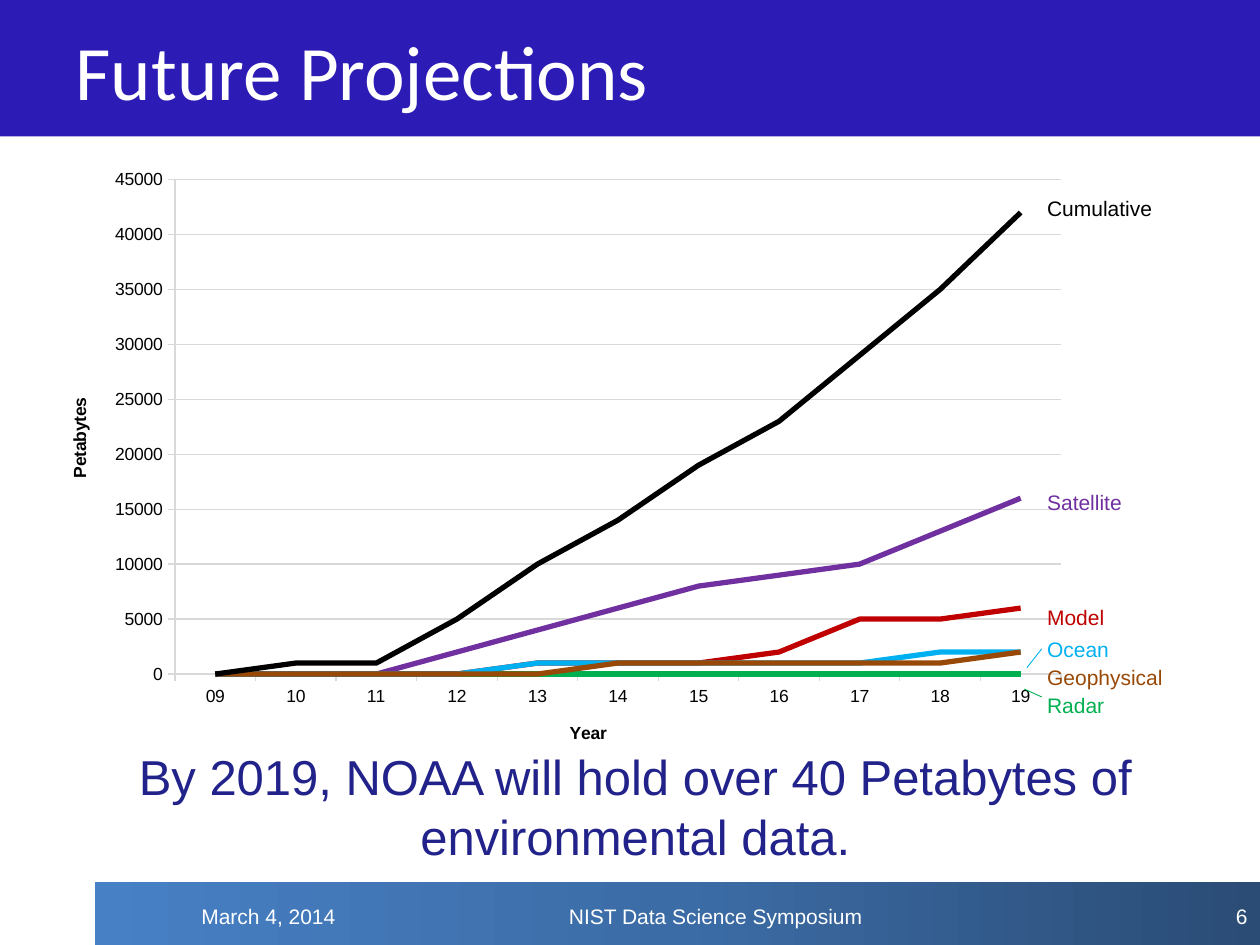
from copy import deepcopy
from dataclasses import dataclass

from pptx import Presentation
from pptx.chart.data import CategoryChartData
from pptx.dml.color import RGBColor
from pptx.enum.chart import XL_CHART_TYPE, XL_TICK_MARK
from pptx.enum.shapes import MSO_CONNECTOR, MSO_SHAPE
from pptx.enum.text import MSO_ANCHOR, MSO_AUTO_SIZE, PP_ALIGN
from pptx.oxml import parse_xml
from pptx.oxml.ns import nsdecls, qn
from pptx.util import Cm, Pt


@dataclass(frozen=True)
class Theme:
    heading_font: str = "Calibri"
    body_font: str = "Arial"
    title_size: int = 44
    statement_size: int = 28
    label_size: int = 12
    axis_size: int = 10
    white: str = "FFFFFF"
    black: str = "000000"
    banner: str = "2D1BB5"
    statement: str = "22228B"
    grid: str = "D9D9D9"
    footer_gradient: tuple = ("4780C5", "3C6CA6", "2A4C75")


THEME = Theme()

TITLE = "Future Projections"
STATEMENT = "By 2019, NOAA will hold over 40 Petabytes of environmental data."
YEARS = ["09", "10", "11", "12", "13", "14", "15", "16", "17", "18", "19"]
# name, colour, label top in cm, values
SERIES = [
    ("Satellite", "7030A0", 9.75,
     [0, 0, 0, 2000, 4000, 6000, 8000, 9000, 10000, 13000, 16000]),
    ("Radar", "00B050", 13.84, [0, 0, 0, 0, 0, 0, 0, 0, 0, 0, 0]),
    ("Model", "C00000", 12.07,
     [0, 0, 0, 0, 1000, 1000, 1000, 2000, 5000, 5000, 6000]),
    ("Ocean", "00B0F0", 12.7,
     [0, 0, 0, 0, 1000, 1000, 1000, 1000, 1000, 2000, 2000]),
    ("Geophysical", "984807", 13.28,
     [0, 0, 0, 0, 0, 1000, 1000, 1000, 1000, 1000, 2000]),
    ("Cumulative", "000000", 3.81,
     [0, 1000, 1000, 5000, 10000, 14000, 19000, 23000, 29000, 35000, 42000]),
]
# colour, start and end in cm
LEADERS = [
    ("00B0F0", (20.7, 13.46), (21.0, 13.08)),
    ("00B050", (20.65, 13.89), (21.0, 14.05)),
]
# text, left and width in cm, alignment
FOOTER = [
    ("March 4, 2014", 3.81, 3.23, PP_ALIGN.LEFT),
    ("NIST Data Science Symposium", 11.22, 6.48, PP_ALIGN.LEFT),
    ("6", 19.48, 5.92, PP_ALIGN.RIGHT),
]
LABEL_LEFT, LABEL_WIDTH, LABEL_HEIGHT = 20.86, 2.9, 0.77
CHART_WIDTH, CHART_HEIGHT = 20.96, 12.34


def color(value):
    return RGBColor.from_string(value)


def style_font(font, size, value, name=THEME.body_font, bold=False):
    font.size, font.name, font.bold = Pt(size), name, bold
    font.color.rgb = color(value)


def place(shape, left, top, width, height):
    shape.left, shape.top = Cm(left), Cm(top)
    shape.width, shape.height = Cm(width), Cm(height)


def add_bar(slide, left, top, width, height):
    bar = slide.shapes.add_shape(
        MSO_SHAPE.RECTANGLE, Cm(left), Cm(top), Cm(width), Cm(height))
    bar.shadow.inherit = False
    bar.line.fill.background()
    return bar


def apply_gradient(shape, colors):
    """Spread any number of colours evenly from left to right."""
    shape.fill.gradient()
    shape.fill.gradient_angle = 0
    stops = shape._element.spPr.find(qn("a:gradFill")).find(qn("a:gsLst"))
    while len(stops) < len(colors):
        stops.append(deepcopy(stops[-1]))
    for index, (stop, value) in enumerate(zip(shape.fill.gradient_stops, colors)):
        stop.color.rgb = color(value)
        stop.position = index / (len(colors) - 1)


def add_label(slide, text, left, top, width, value, alignment=PP_ALIGN.LEFT):
    box = slide.shapes.add_textbox(
        Cm(left), Cm(top), Cm(width), Cm(LABEL_HEIGHT))
    box.text_frame.word_wrap = True
    box.text_frame.text = text
    paragraph = box.text_frame.paragraphs[0]
    paragraph.alignment = alignment
    style_font(paragraph.runs[0].font, THEME.label_size, value)


def fill_placeholder(shape, text, size, value, name, alignment):
    frame = shape.text_frame
    frame.text = text
    frame.auto_size = MSO_AUTO_SIZE.NONE
    frame.word_wrap = True
    frame.vertical_anchor = MSO_ANCHOR.MIDDLE
    paragraph = frame.paragraphs[0]
    paragraph.alignment = alignment
    paragraph.space_before = Pt(0)
    style_font(paragraph.runs[0].font, size, value, name)
    return paragraph


def set_layout(element, index, target=None, **lengths):
    """Fix a chart part at lengths in cm within the chart area."""
    for old in element.findall(qn("c:layout")):
        element.remove(old)
    whole = {"x": CHART_WIDTH, "w": CHART_WIDTH,
             "y": CHART_HEIGHT, "h": CHART_HEIGHT}
    inner = f'<c:layoutTarget val="{target}"/>' if target else ""
    inner += "".join(f'<c:{key}Mode val="edge"/>' for key in ("x", "y"))
    inner += "".join(f'<c:{key} val="{length / whole[key]:.4f}"/>'
                     for key, length in lengths.items())
    element.insert(index, parse_xml(
        f'<c:layout {nsdecls("c")}><c:manualLayout>{inner}'
        '</c:manualLayout></c:layout>'))


def format_axis(axis, title, x, y):
    axis.major_tick_mark = XL_TICK_MARK.OUTSIDE
    axis.minor_tick_mark = XL_TICK_MARK.NONE
    axis.format.line.color.rgb = color(THEME.grid)
    style_font(axis.tick_labels.font, THEME.axis_size, THEME.black)
    frame = axis.axis_title.text_frame
    frame.text = title
    style_font(frame.paragraphs[0].runs[0].font,
               THEME.axis_size, THEME.black, bold=True)
    set_layout(axis.axis_title._element, 1, x=x, y=y)


def add_projection_chart(slide):
    data = CategoryChartData(number_format="0")
    data.categories = YEARS
    for name, _, _, values in SERIES:
        data.add_series(name, values)
    chart = slide.shapes.add_chart(
        XL_CHART_TYPE.LINE, Cm(0.84), Cm(3.18),
        Cm(CHART_WIDTH), Cm(CHART_HEIGHT), data).chart
    chart.has_title = chart.has_legend = False
    style_font(chart.font, THEME.axis_size, THEME.black)
    plot = chart.plots[0]
    plot.vary_by_categories = False
    for series, (_, value, _, _) in zip(plot.series, SERIES):
        series.smooth = False
        series.format.line.color.rgb = color(value)
        series.format.line.width = Pt(3)
    format_axis(chart.category_axis, "Year", 10.58, 11.3)
    value_axis = chart.value_axis
    format_axis(value_axis, "Petabytes", 0.47, 4.77)
    value_axis.minimum_scale, value_axis.maximum_scale = 0, 45000
    value_axis.major_unit = 5000
    value_axis.tick_labels.number_format = "0"
    value_axis.tick_labels.number_format_is_linked = False
    value_axis.major_gridlines.format.line.color.rgb = color(THEME.grid)
    set_layout(chart._chartSpace.chart.plotArea, 0, "inner",
               x=2.69, y=0.44, w=17.86, h=9.97)


def add_leader(slide, value, start, end):
    line = slide.shapes.add_connector(
        MSO_CONNECTOR.STRAIGHT, *(Cm(length) for length in start + end))
    line.line.color.rgb = color(value)
    line.line.width = Pt(0.5)
    line._element.spPr.append(parse_xml(f'<a:effectLst {nsdecls("a")}/>'))


def main():
    presentation = Presentation()
    presentation.slide_width, presentation.slide_height = Cm(25.4), Cm(19.05)
    slide = presentation.slides.add_slide(presentation.slide_layouts[1])
    title, statement = slide.placeholders

    banner = add_bar(slide, 0, 0, 25.4, 2.75)
    banner.fill.solid()
    banner.fill.fore_color.rgb = color(THEME.banner)
    slide.shapes._spTree.insert(2, banner._element)
    apply_gradient(add_bar(slide, 1.91, 17.78, 23.49, 1.27), THEME.footer_gradient)
    for text, left, width, alignment in FOOTER:
        add_label(slide, text, left, 18.08, width, THEME.white, alignment)

    place(title, 1.27, 0.03, 22.86, 2.74)
    fill_placeholder(title, TITLE, THEME.title_size, THEME.white,
                     THEME.heading_font, PP_ALIGN.LEFT)
    place(statement, 0.84, 14.6, 23.93, 3.25)
    paragraph = fill_placeholder(
        statement, STATEMENT, THEME.statement_size, THEME.statement,
        THEME.body_font, PP_ALIGN.CENTER)
    paragraph.line_spacing = 1.03
    properties = paragraph._p.get_or_add_pPr()
    properties.set("marL", "0")
    properties.set("indent", "0")
    properties.append(parse_xml(f'<a:buNone {nsdecls("a")}/>'))

    add_projection_chart(slide)
    for name, value, top, _ in SERIES:
        add_label(slide, name, LABEL_LEFT, top, LABEL_WIDTH, value)
    for leader in LEADERS:
        add_leader(slide, *leader)
    presentation.save("out.pptx")


if __name__ == "__main__":
    main()
